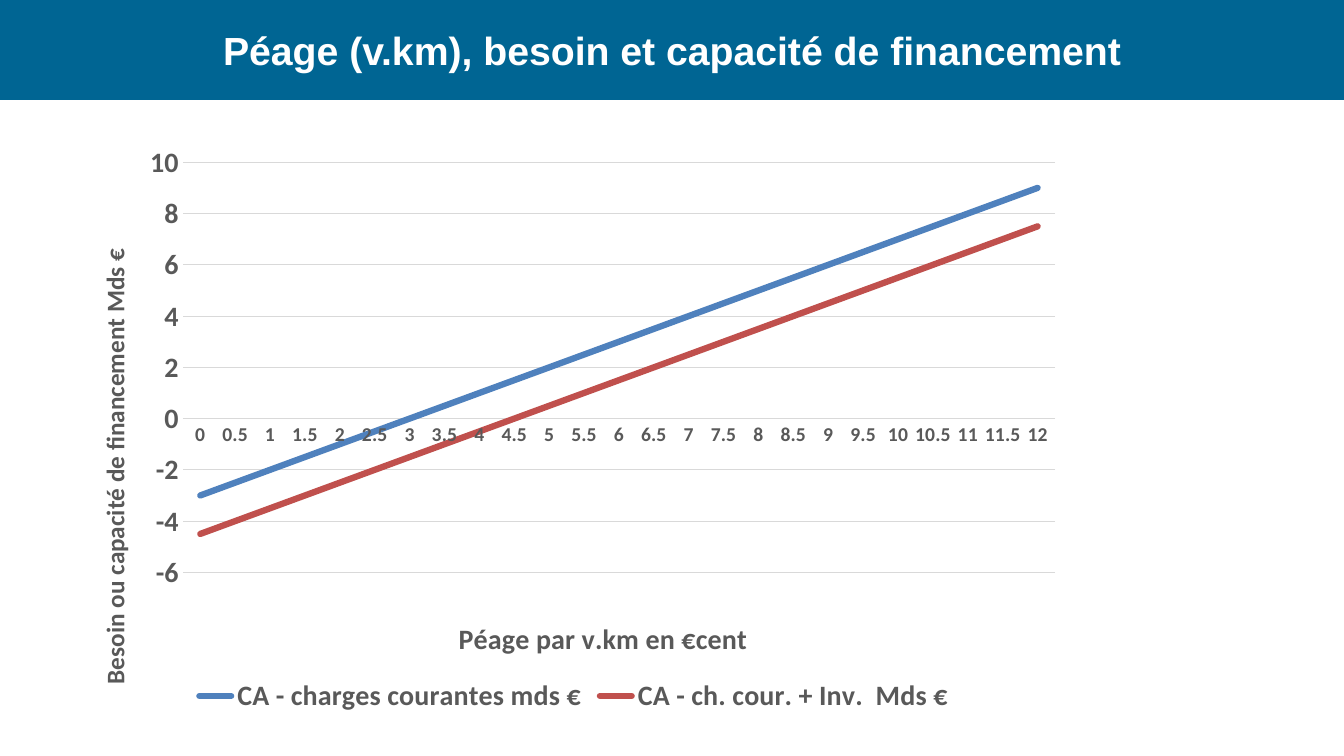
from pptx import Presentation
from pptx.chart.data import CategoryChartData as Data
from pptx.dml.color import RGBColor as Rgb
from pptx.enum.chart import XL_CHART_TYPE as Kind, XL_LEGEND_POSITION as Spot, XL_TICK_MARK as Tick
from pptx.enum.shapes import MSO_SHAPE as Shape
from pptx.enum.text import MSO_ANCHOR as Anchor, PP_ALIGN as Align
from pptx.oxml import parse_xml
from pptx.oxml.ns import nsdecls, qn
from pptx.util import Inches, Pt

HUES = {"band": "006593", "white": "FFFFFF", "text": "595959", "grid": "D9D9D9",
        "blue": "4F81BD", "red": "C0504D"}


def apply(item, **values):
    for name, value in values.items():
        setattr(item, name, value)


def place(node, x, y, w=None, h=None):
    """Fix a chart part at shares of the chart's size."""
    for old in node.findall(qn("c:layout")):
        node.remove(old)
    rows = [("xMode", "edge"), ("yMode", "edge"), ("x", x), ("y", y)]
    if w:
        rows = [("layoutTarget", "inner")] + rows + [("w", w), ("h", h)]
    body = "".join(f'<c:{tag} val="{val}"/>' for tag, val in rows)
    spot = 0 if node.find(qn("c:tx")) is None else 1
    node.insert(spot, parse_xml(
        f'<c:layout {nsdecls("c")}><c:manualLayout>{body}</c:manualLayout></c:layout>'))


class Deck:
    def __init__(self):
        self.prs = Presentation()
        apply(self.prs, slide_width=Inches(13.33), slide_height=Inches(7.5))
        self.slide = self.prs.slides.add_slide(self.prs.slide_layouts[6])

    def box(self, x, y, w, h):
        """Turn shares of the slide, in percent, into lengths."""
        wide, high = self.prs.slide_width, self.prs.slide_height
        return [int(part * size / 100) for part, size in zip((x, y, w, h), (wide, high) * 2)]

    def font(self, font, size, hue="text", face="Calibri"):
        apply(font, size=Pt(size), bold=True, name=face)
        font.color.rgb = Rgb.from_string(HUES[hue])

    def line(self, line, hue, width):
        line.color.rgb = Rgb.from_string(HUES[hue])
        line.width = Pt(width)

    def band(self, text, *area):
        shape = self.slide.shapes.add_shape(Shape.RECTANGLE, *self.box(*area))
        shape.shadow.inherit = False
        shape.fill.solid()
        shape.fill.fore_color.rgb = Rgb.from_string(HUES["band"])
        shape.line.fill.background()
        apply(shape.text_frame, text=text, vertical_anchor=Anchor.MIDDLE, word_wrap=True)
        par = shape.text_frame.paragraphs[0]
        par.alignment = Align.CENTER
        self.font(par.runs[0].font, 28, "white", "Arial")

    def axis(self, axis, title, size, spot, label, turn=0):
        apply(axis, major_tick_mark=Tick.NONE, minor_tick_mark=Tick.NONE)
        self.font(axis.tick_labels.font, label)
        frame = axis.axis_title.text_frame
        frame.text = title
        self.font(frame.paragraphs[0].runs[0].font, size)
        body = frame._txBody.find(qn("a:bodyPr"))
        body.set("rot", str(turn * 60000))
        body.set("vert", "horz")
        place(axis.axis_title._element, *spot)

    def chart(self, cats, lines, *area):
        data = Data()
        data.categories = cats
        for name, hue, vals in lines:
            data.add_series(name, vals)
        chart = self.slide.shapes.add_chart(Kind.LINE, *self.box(*area), data).chart
        apply(chart, has_title=False, has_legend=True)
        apply(chart.legend, position=Spot.BOTTOM, include_in_layout=False)
        self.font(chart.legend.font, 20)
        place(chart._chartSpace.chart.plotArea, 0.11, 0.05, 0.87, 0.7)

        # Series
        for row, (name, hue, vals) in zip(chart.plots[0].series, lines):
            row.smooth = False
            self.line(row.format.line, hue, 4.5)
            row.format.line._ln.set("cap", "rnd")

        # Axes
        base, side = chart.category_axis, chart.value_axis
        self.axis(base, "Péage par v.km en €cent", 20, (0.38, 0.82), 14)
        self.axis(side, "Besoin ou capacité de financement Mds €", 18, (0.02, 0.19), 20, -90)
        self.line(base.format.line, "grid", 0.75)
        side.format.line.fill.background()
        apply(side, minimum_scale=-6, maximum_scale=10, major_unit=2, has_major_gridlines=True)
        self.line(side.major_gridlines.format.line, "grid", 0.75)


def main():
    deck = Deck()
    # Title band
    deck.band("Péage (v.km), besoin et capacité de financement", 0, 0, 100, 13.2)
    # Line chart: each half cent of toll adds half a billion
    tolls = [step / 2 for step in range(25)]
    lines = [("CA - charges courantes mds €", "blue", [toll - 3 for toll in tolls]),
             ("CA - ch. cour. + Inv.  Mds €", "red", [toll - 4.5 for toll in tolls])]
    deck.chart([f"{toll:g}" for toll in tolls], lines, 5.4, 17.6, 74.6, 77.5)
    deck.prs.save("out.pptx")


if __name__ == "__main__":
    main()
